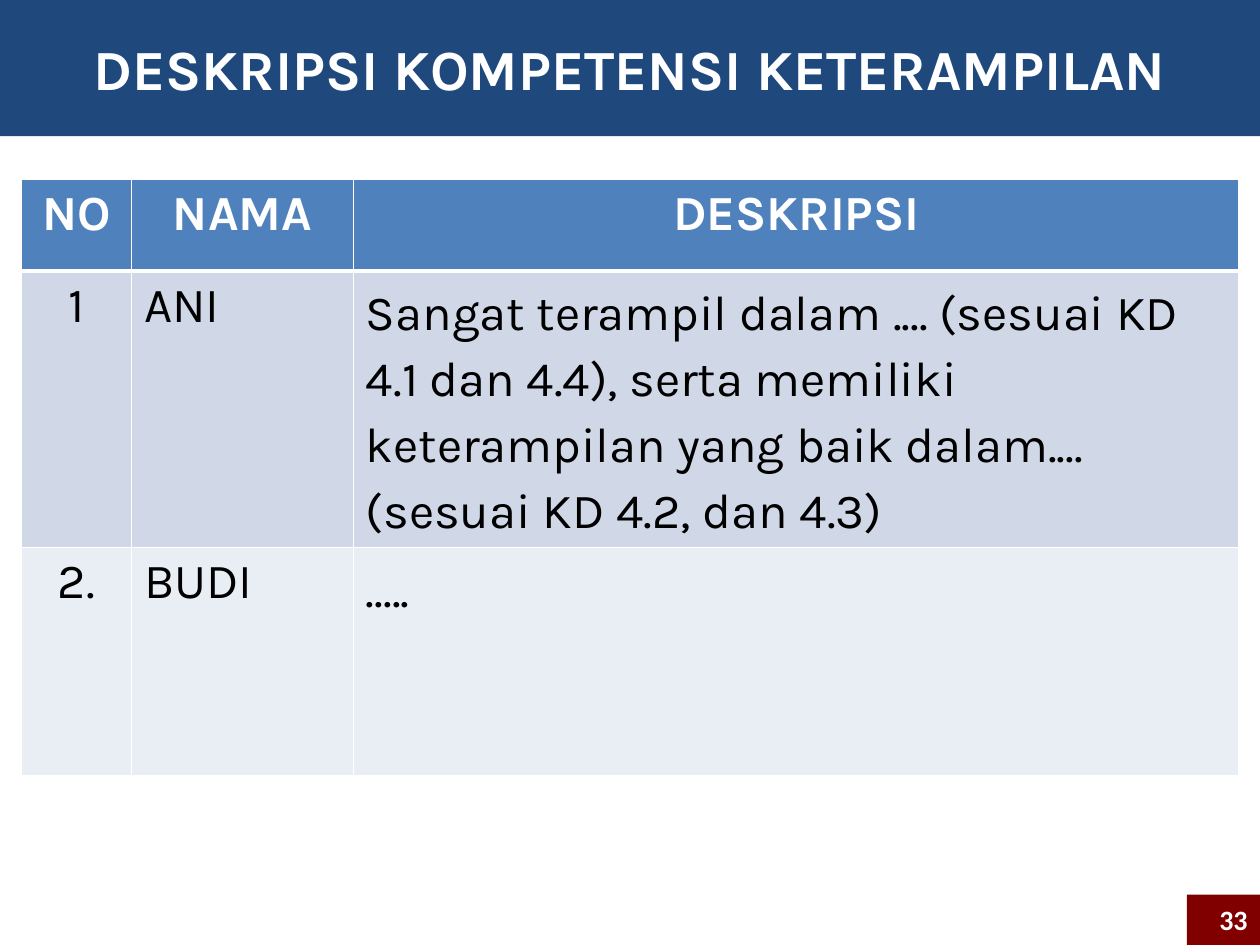
from lxml.etree import SubElement
from pptx import Presentation
from pptx.dml.color import RGBColor
from pptx.enum.shapes import MSO_SHAPE
from pptx.enum.text import MSO_ANCHOR, PP_ALIGN
from pptx.oxml.ns import qn
from pptx.util import Inches, Pt

WIDTH, HEIGHT = 10, 7.5
COLORS = {
    "navy": "1F497D",
    "maroon": "800000",
    "header": "4F81BD",
    "odd": "D0D8E8",
    "even": "E9EDF4",
    "white": "FFFFFF",
    "black": "000000",
}
COLUMNS = [0.88, 1.76, 7.03]
ROWS = [0.73, 1.81, 1.81]
ROW_FILLS = ["header", "odd", "even"]
CONTENT = [
    ["NO", "NAMA", "DESKRIPSI"],
    ["1", "ANI", "Sangat terampil dalam .... (sesuai KD 4.1 dan 4.4), serta memiliki "
                 "keterampilan yang baik dalam.... (sesuai KD 4.2, dan 4.3)"],
    ["2.", "BUDI", "....."],
]


def rgb(name):
    """Return the named colour."""
    return RGBColor.from_string(COLORS[name])


def write(frame, text, size, font, color, bold, align):
    """Put one formatted paragraph in a text frame and return it."""
    frame.text = text
    para = frame.paragraphs[0]
    para.alignment = align
    span = para.runs[0].font
    span.size, span.name, span.bold = Pt(size), font, bold
    span.color.rgb = rgb(color)
    return para


def add_block(page, left, top, width, height, fill, text, size, font, align):
    """Add a filled rectangle with bold white text."""
    box = page.shapes.add_shape(
        MSO_SHAPE.RECTANGLE, Inches(left), Inches(top), Inches(width), Inches(height))
    box.shadow.inherit = False
    box.fill.solid()
    box.fill.fore_color.rgb = rgb(fill)
    box.line.fill.background()
    box.text_frame.word_wrap = True
    box.text_frame.vertical_anchor = MSO_ANCHOR.MIDDLE
    write(box.text_frame, text, size, font, "white", True, align)


def set_borders(cell, top, bottom):
    """Draw white borders of the given point widths, with thin sides."""
    properties = cell._tc.get_or_add_tcPr()
    for side, points in (("L", 1), ("R", 1), ("T", top), ("B", bottom)):
        line = SubElement(properties, qn(f"a:ln{side}"), w=str(Pt(points)))
        fill = SubElement(line, qn("a:solidFill"))
        SubElement(fill, qn("a:srgbClr"), val=COLORS["white"])


def fill_cell(cell, row, column, text):
    """Write and style one table cell according to its place."""
    header = row == 0
    set_borders(cell, 3 if row == 1 else 1, 3 if header else 1)
    cell.fill.solid()
    cell.fill.fore_color.rgb = rgb(ROW_FILLS[row])
    align = PP_ALIGN.CENTER if header or column == 0 else PP_ALIGN.LEFT
    color = "white" if header else "black"
    para = write(cell.text_frame, text, 28, "Karla", color, header, align)
    if column == 2 and not header:
        para.line_spacing = 1.15
        para.space_after = Pt(10)


def add_description_table(page):
    """Add the table of student skill descriptions."""
    table = page.shapes.add_table(
        len(ROWS), len(COLUMNS), Inches((WIDTH - sum(COLUMNS)) / 2), Inches(1.42),
        Inches(sum(COLUMNS)), Inches(sum(ROWS))).table
    for column, width in zip(table.columns, COLUMNS):
        column.width = Inches(width)
    for row, height in zip(table.rows, ROWS):
        row.height = Inches(height)
    for row, texts in enumerate(CONTENT):
        for column, text in enumerate(texts):
            fill_cell(table.cell(row, column), row, column, text)


def main():
    """Build and save the slide."""
    deck = Presentation()
    deck.slide_width, deck.slide_height = Inches(WIDTH), Inches(HEIGHT)
    page = deck.slides.add_slide(deck.slide_layouts[6])
    add_block(page, 0, 0, WIDTH, 1.08, "navy", "DESKRIPSI KOMPETENSI KETERAMPILAN",
              32.4, "Karla", PP_ALIGN.CENTER)
    add_description_table(page)
    add_block(page, WIDTH - 0.58, HEIGHT - 0.4, 0.58, 0.4, "maroon", "33",
              16, "Calibri", PP_ALIGN.RIGHT)
    deck.save("out.pptx")


if __name__ == "__main__":
    main()
